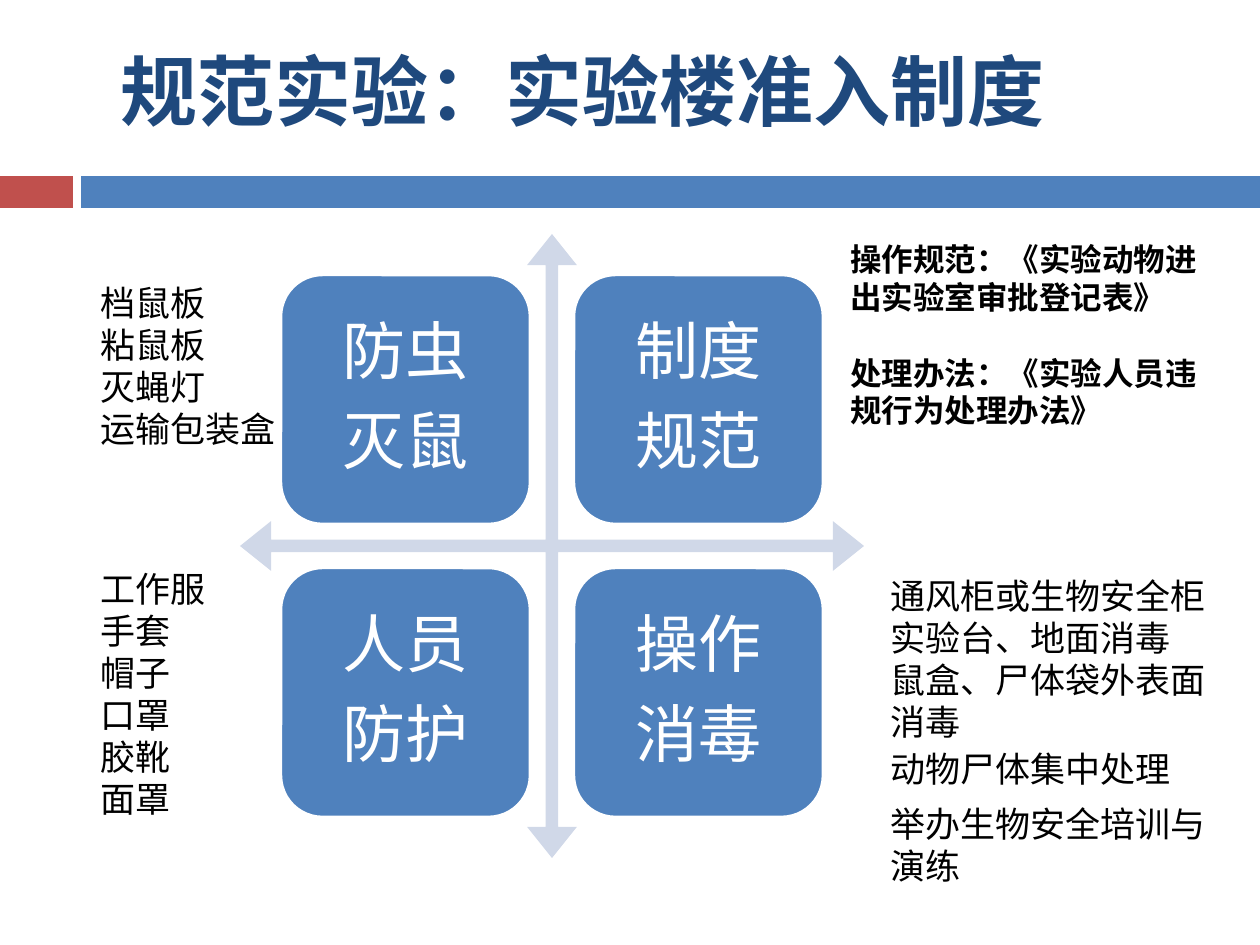
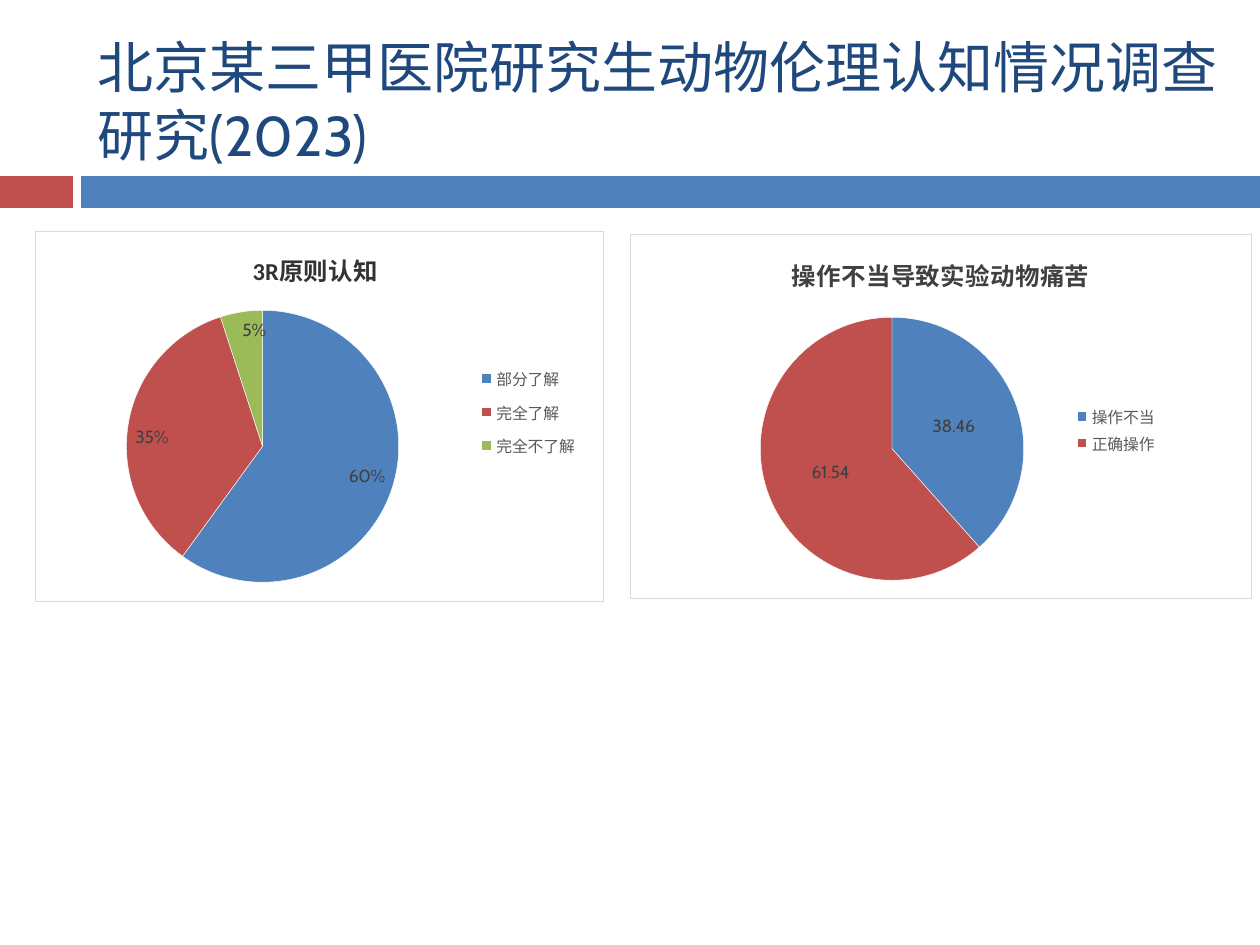
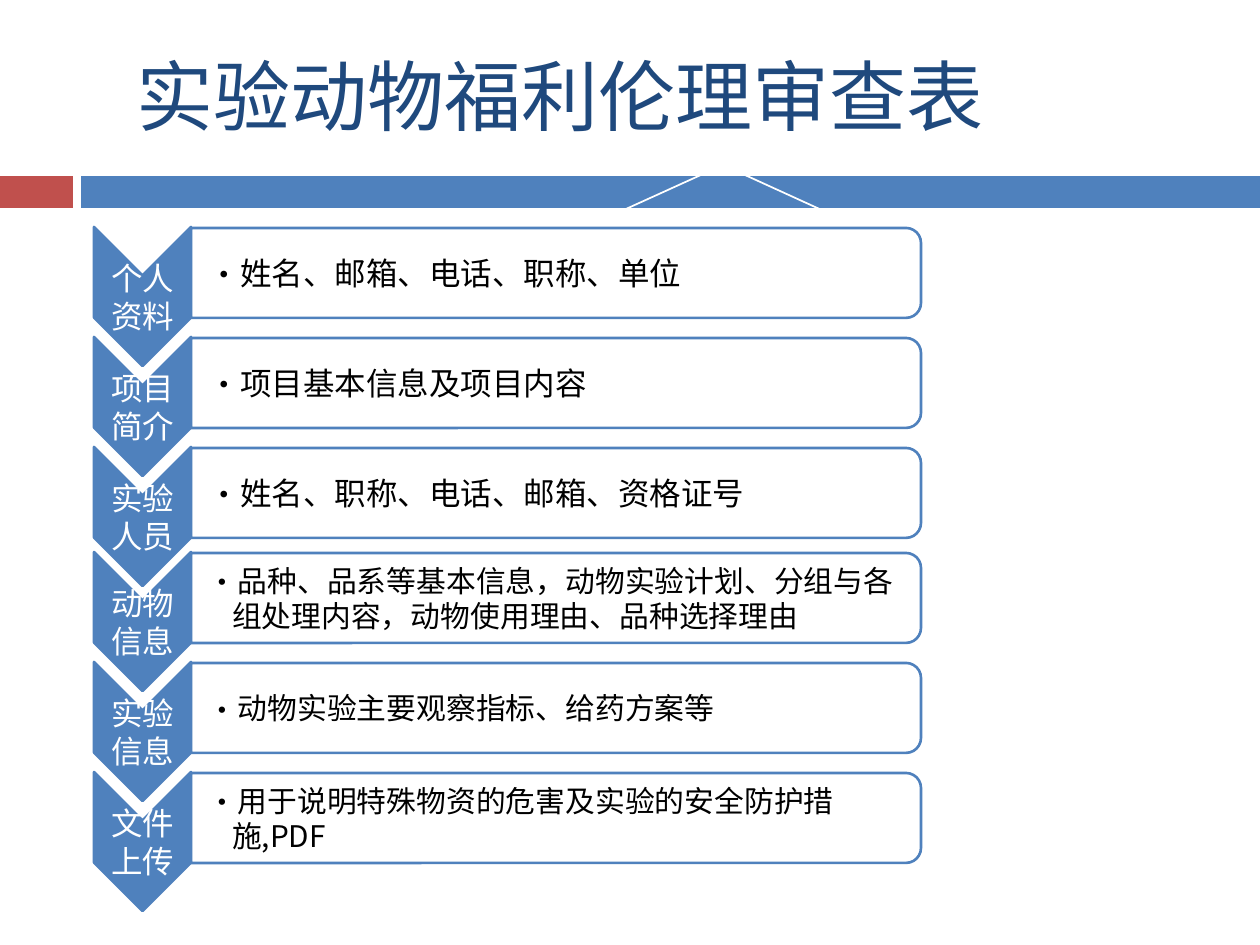
from lxml.etree import SubElement
from pptx import Presentation
from pptx.chart.data import CategoryChartData
from pptx.dml.color import RGBColor
from pptx.enum.chart import XL_CHART_TYPE as ChartType, XL_LABEL_POSITION as LabelPosition
from pptx.enum.chart import XL_LEGEND_POSITION as LegendPosition
from pptx.enum.lang import MSO_LANGUAGE_ID as Language
from pptx.enum.shapes import MSO_SHAPE as Shape
from pptx.enum.text import MSO_ANCHOR as Anchor, MSO_AUTO_SIZE as AutoSize, PP_ALIGN as Align
from pptx.oxml import parse_xml
from pptx.oxml.ns import nsdecls, qn
from pptx.util import Pt

EMU_PER_PX = 914400 / 126
COLORS = {
    "blue": "4F81BD", "red": "C0504D", "green": "9BBB59", "navy": "1F497D",
    "pale": "D0D8E8", "white": "FFFFFF", "black": "000000", "border": "D9D9D9",
    "label": "404040", "legend": "595959", "heading": "333333",
}
CABIN, NOTO, ARIAL, CALIBRI = "Cabin", "Noto Sans CJK SC", "Arial", "Calibri"

BANDS = [((0, 176, 73, 32), "red"), ((81, 176, 1179, 32), "blue")]

ACCESS_TITLE = "规范实验：实验楼准入制度"
QUADRANTS = [["防虫", "灭鼠"], ["制度", "规范"], ["人员", "防护"], ["操作", "消毒"]]
ACCESS_NOTES = [
    ((88, 561, 335, 267), ["工作服", "手套", "帽子", "口罩", "胶靴", "面罩"]),
    ((878, 568, 353, 183), ["通风柜或生物安全柜", "实验台、地面消毒", "鼠盒、尸体袋外表面消毒"]),
    ((878, 741, 335, 55), ["动物尸体集中处理"]),
    ((88, 275, 246, 224), ["档鼠板", "粘鼠板", "灭蝇灯", "运输包装盒"]),
    ((878, 796, 352, 97), ["举办生物安全培训与演练"]),
]
RULES = ["操作规范：《实验动物进出实验室审批登记表》", "处理办法：《实验人员违规行为处理办法》"]

SURVEY_TITLE = "北京某三甲医院研究生动物伦理认知情况调查研究(2023)"
PIES = [
    {
        "box": (35, 231, 569, 371), "title": "3R原则认知", "title_at": (248, 244),
        "title_font": CALIBRI, "title_color": "heading",
        "plot": (126, 310, 273, 273), "legend": (478, 356, 102, 112),
        "data": {"部分了解": 60, "完全了解": 35, "完全不了解": 5},
        "percent": True, "position": LabelPosition.INSIDE_END,
    },
    {
        "box": (630, 234, 622, 365), "title": "操作不当导致实验动物痛苦", "title_at": (787, 249),
        "title_font": CABIN, "title_color": "label",
        "plot": (760, 317, 264, 264), "legend": (1073, 401, 87, 58),
        "data": {"操作不当": 38.46, "正确操作": 61.54},
        "percent": False, "position": LabelPosition.CENTER,
    },
]

REVIEW_TITLE = "实验动物福利伦理审查表"
ARROW_POINTS = [(538, 249), (723, 165), (907, 249), (815, 249), (815, 404), (630, 404), (630, 249)]
REVIEW_GROUPS = [
    (227, 18, [
        ("个人资料", "姓名、邮箱、电话、职称、单位"),
        ("项目简介", "项目基本信息及项目内容"),
        ("实验人员", "姓名、职称、电话、邮箱、资格证号"),
    ]),
    (552, 17, [
        ("动物信息", "品种、品系等基本信息，动物实验计划、分组与各组处理内容，动物使用理由、品种选择理由"),
        ("实验信息", "动物实验主要观察指标、给药方案等"),
        ("文件上传", "用于说明特殊物资的危害及实验的安全防护措施,PDF"),
    ]),
]


def px(value):
    return round(value * EMU_PER_PX)


def place(box):
    return [px(value) for value in box]


def rgb(name):
    return RGBColor.from_string(COLORS[name])


def set_font(font, size, color, name, bold=False):
    font.size = Pt(size)
    font.color.rgb = rgb(color)
    font.name = name
    font.bold = bold


def write(frame, lines, size, color, name, bold=False, align=Align.LEFT, insets=None):
    frame.word_wrap = True
    frame.auto_size = AutoSize.NONE
    if insets:
        (frame.margin_left, frame.margin_top,
         frame.margin_right, frame.margin_bottom) = place(insets)
    frame.text = "\n".join(lines)
    for para in frame.paragraphs:
        para.alignment = align
        for span in para.runs:
            set_font(span.font, size, color, name, bold)
            span.font.language_id = Language.SIMPLIFIED_CHINESE
            SubElement(span._r.get_or_add_rPr(), qn("a:ea"), typeface=CABIN)


def add_text(page, box, lines, *style, **options):
    frame = page.shapes.add_textbox(*place(box)).text_frame
    write(frame, lines, *style, **options)
    return frame


def add_shape(page, kind, box, fill, line=None, width=1.5, rotation=0):
    shape = page.shapes.add_shape(kind, *place(box))
    shape.shadow.inherit = False
    shape.rotation = rotation
    shape.fill.solid()
    shape.fill.fore_color.rgb = rgb(fill)
    if line:
        shape.line.color.rgb = rgb(line)
        shape.line.width = Pt(width)
    else:
        shape.line.fill.background()
    return shape


def add_turned(page, kind, box, fill):
    left, top, width, height = box
    shift = (width - height) / 2
    turned = (left + shift, top - shift, height, width)
    return add_shape(page, kind, turned, fill, "blue", rotation=90)


def add_page(deck, title, box, size, name, bold=False):
    page = deck.slides.add_slide(deck.slide_layouts[5])
    holder = page.shapes.title
    holder.left, holder.top, holder.width, holder.height = place(box)
    holder.text_frame.vertical_anchor = Anchor.MIDDLE
    write(holder.text_frame, [title], size, "navy", name, bold)
    return page


def add_bands_to_layout(page):
    layout = page.slide_layout
    for holder in list(layout.placeholders)[1:]:
        holder.element.getparent().remove(holder.element)
    bands = [add_shape(page, Shape.RECTANGLE, box, color) for box, color in BANDS]
    for band in bands:
        layout.shapes.element.append(band.element)


def build_access(deck):
    page = add_page(deck, ACCESS_TITLE, (108, 22, 1089, 136), 44, NOTO, True)
    add_bands_to_layout(page)
    cross = add_shape(page, Shape.QUAD_ARROW, (240, 234, 624, 624), "pale")
    for index, value in enumerate((0.02, 0.04, 0.05)):
        cross.adjustments[index] = value
    for index, words in enumerate(QUADRANTS):
        row, column = divmod(index, 2)
        box = (281 + 293 * column, 275 + 293 * row, 249, 249)
        tile = add_shape(page, Shape.ROUNDED_RECTANGLE, box, "blue", "white")
        tile.text_frame.vertical_anchor = Anchor.MIDDLE
        write(tile.text_frame, words, 36, "white", CABIN, align=Align.CENTER, insets=[19] * 4)
        for para in tile.text_frame.paragraphs:
            para.line_spacing = 0.9
            para.space_after = Pt(12.6)
    for box, lines in ACCESS_NOTES:
        add_text(page, box, lines, 20, "black", ARIAL)
    rules = add_text(page, (838, 234, 402, 203), RULES, 18, "black", ARIAL, bold=True)
    rules.paragraphs[1].space_before = Pt(21.6)


def set_layout(parent, index, outer, inner, target=""):
    for old in parent.findall(qn("c:layout")):
        parent.remove(old)
    layout = parse_xml(f"<c:layout {nsdecls('c')}><c:manualLayout/></c:layout>")
    manual = layout[0]
    if target:
        SubElement(manual, qn("c:layoutTarget"), val=target)
    for mode in ("xMode", "yMode"):
        SubElement(manual, qn("c:" + mode), val="edge")
    left, top, width, height = outer
    shares = [(inner[0] - left) / width, (inner[1] - top) / height]
    if len(inner) == 4:
        shares += [inner[2] / width, inner[3] / height]
    for key, share in zip("xywh", shares):
        SubElement(manual, qn("c:" + key), val=f"{share:.4f}")
    parent.insert(index, layout)


def add_pie(page, pie):
    data = CategoryChartData()
    data.categories = list(pie["data"])
    data.add_series("Series 1", list(pie["data"].values()))
    chart = page.shapes.add_chart(ChartType.PIE, *place(pie["box"]), data).chart
    set_font(chart.font, 10, "black", CABIN)
    chart.has_title = True
    heading = chart.chart_title.text_frame
    heading.text = pie["title"]
    set_font(heading.paragraphs[0].runs[0].font, 14, pie["title_color"], pie["title_font"], True)
    chart.has_legend = True
    chart.legend.position = LegendPosition.RIGHT
    chart.legend.include_in_layout = False
    set_font(chart.legend.font, 9, "legend", CABIN)
    plot = chart.plots[0]
    plot.vary_by_categories = True
    for index, color in zip(range(len(pie["data"])), ("blue", "red", "green")):
        point = plot.series[0].points[index].format
        point.fill.solid()
        point.fill.fore_color.rgb = rgb(color)
        point.line.color.rgb = rgb("white")
        point.line.width = Pt(0.25)
    plot.has_data_labels = True
    labels = plot.data_labels
    labels.show_percentage = pie["percent"]
    labels.show_value = not pie["percent"]
    labels.number_format = "0%" if pie["percent"] else "General"
    labels.number_format_is_linked = False
    labels.position = pie["position"]
    set_font(labels.font, 10, "label", CABIN)
    root = chart.element
    set_layout(root.find(".//" + qn("c:title")), 1, pie["box"], pie["title_at"])
    set_layout(root.find(".//" + qn("c:plotArea")), 0, pie["box"], pie["plot"], "inner")
    set_layout(root.find(".//" + qn("c:legend")), 1, pie["box"], pie["legend"])
    root.find(qn("c:chart")).addnext(parse_xml(
        f'<c:spPr {nsdecls("c", "a")}>'
        f'<a:solidFill><a:srgbClr val="{COLORS["white"]}"/></a:solidFill>'
        f'<a:ln w="9525"><a:solidFill><a:srgbClr val="{COLORS["border"]}"/></a:solidFill></a:ln>'
        '</c:spPr>'))


def build_survey(deck):
    page = add_page(deck, SURVEY_TITLE, (85, 32, 1155, 136), 32, CABIN)
    for pie in PIES:
        add_pie(page, pie)


def add_review_row(page, top, size, label, detail):
    add_turned(page, Shape.CHEVRON, (94, top, 97, 139), "blue")
    tag = add_text(page, (94, top + 49, 97, 42), [label], 18, "white", NOTO,
                   align=Align.CENTER, insets=[2] * 4)
    tag.vertical_anchor = Anchor.MIDDLE
    body = add_turned(page, Shape.ROUND_2_SAME_RECTANGLE, (191, top + 1, 730, 90), "white")
    tint = body.element.spPr.find(qn("a:solidFill"))[0]
    SubElement(tint, qn("a:alpha"), val="90000")
    text = add_text(page, (191, top + 5, 726, 82), [detail], size, "black", NOTO,
                    insets=(size, 1, 1, 1))
    text.vertical_anchor = Anchor.MIDDLE
    props = text.paragraphs[0]._p.get_or_add_pPr()
    props.set("marL", str(px(24)))
    props.set("indent", str(-px(24)))
    SubElement(props, qn("a:buFont"), typeface=NOTO)
    SubElement(props, qn("a:buChar"), char="•")


def build_review(deck):
    page = add_page(deck, REVIEW_TITLE, (124, 27, 1124, 136), 44, CABIN)
    builder = page.shapes.build_freeform(*ARROW_POINTS[0], scale=EMU_PER_PX)
    builder.add_line_segments(ARROW_POINTS[1:], close=True)
    arrow = builder.convert_to_shape()
    arrow.shadow.inherit = False
    arrow.fill.background()
    arrow.line.color.rgb = rgb("white")
    arrow.line.width = Pt(1)
    for group_top, size, rows in REVIEW_GROUPS:
        for index, (label, detail) in enumerate(rows):
            add_review_row(page, group_top + 110 * index, size, label, detail)


def main():
    deck = Presentation()
    deck.slide_width, deck.slide_height = px(1260), px(945)
    build_access(deck)
    build_survey(deck)
    build_review(deck)
    deck.save("out.pptx")


if __name__ == "__main__":
    main()
